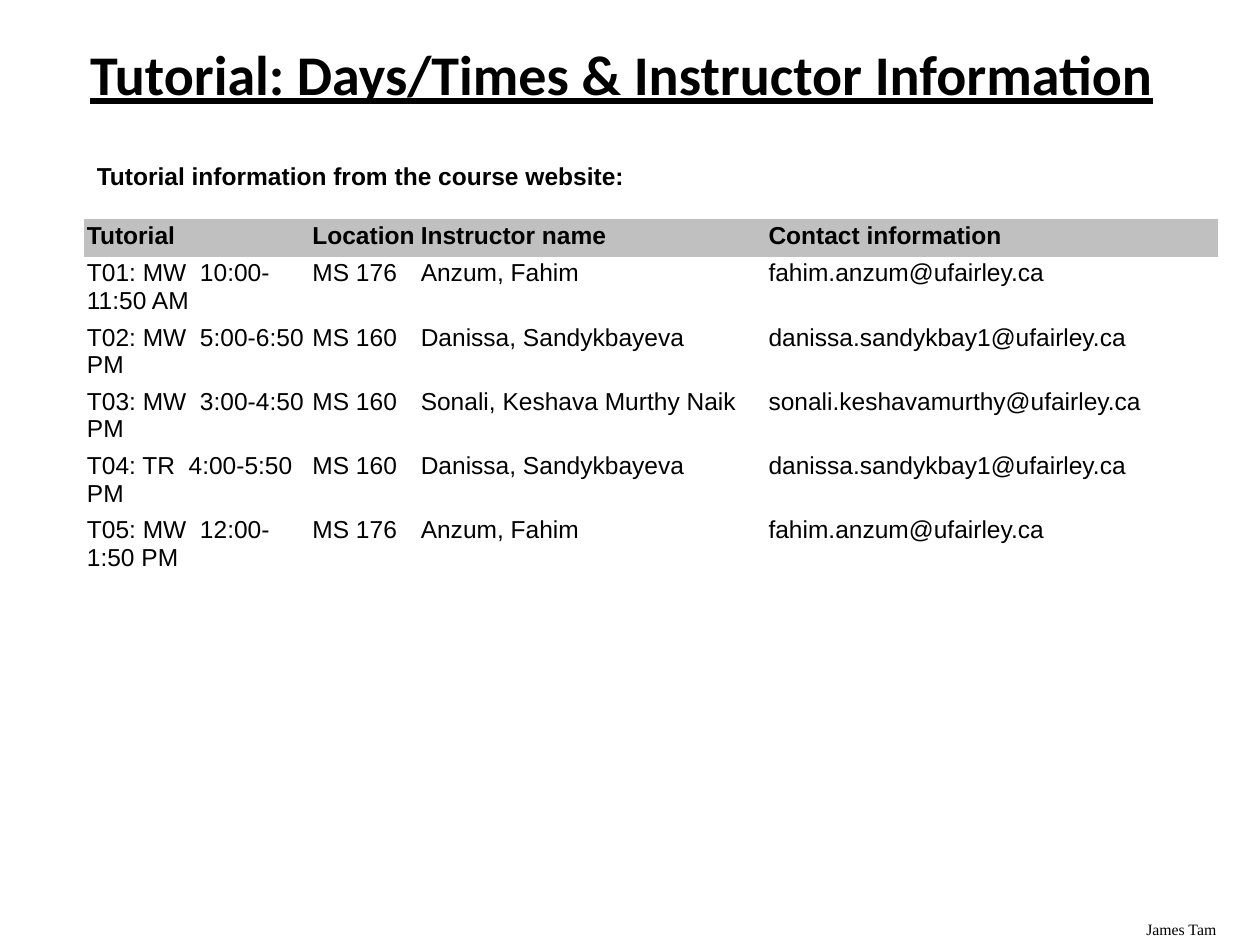
import pptx
import pptx.dml.color
import pptx.enum.text
import pptx.oxml.ns
import pptx.util

TITLE = "Tutorial: Days/Times & Instructor Information"
INTRODUCTION = "Tutorial information from the course website:"
AUTHOR = "James Tam"
HEADINGS = ("Tutorial", "Location", "Instructor name", "Contact information")
INSTRUCTORS = {
    "Anzum, Fahim": "fahim.anzum@ufairley.ca",
    "Danissa, Sandykbayeva": "danissa.sandykbay1@ufairley.ca",
    "Sonali, Keshava Murthy Naik": "sonali.keshavamurthy@ufairley.ca",
}
TUTORIALS = (
    ("T01: MW", "10:00-11:50 AM", "MS 176", "Anzum, Fahim"),
    ("T02: MW", "5:00-6:50 PM", "MS 160", "Danissa, Sandykbayeva"),
    ("T03: MW", "3:00-4:50 PM", "MS 160", "Sonali, Keshava Murthy Naik"),
    ("T04: TR", "4:00-5:50 PM", "MS 160", "Danissa, Sandykbayeva"),
    ("T05: MW", "12:00-1:50 PM", "MS 176", "Anzum, Fahim"),
)
NO_BREAK_GAP = chr(160) * 2

THEME = {
    "text": "000000", "header": "C0C0C0", "body": "FFFFFF",
    "title_font": "Calibri", "body_font": "Arial", "footer_font": "Times New Roman",
    "title_size": 32, "body_size": 14, "footer_size": 9,
    "table_style": "{2D5ABB26-0587-4C30-8999-92F81FD0307C}",
}

SLIDE_WIDTH, SLIDE_HEIGHT = 10, 7.5
LEFT = 0.67
SCHEDULE_COLUMNS = (1.79, 0.86, 2.76, 3.59)
SCHEDULE_ROWS = [0.3] + [0.51] * len(TUTORIALS)
PANEL_COLUMNS = (2.98, 2.55, 4.02)
PANEL_ROWS = [0.36] * 12
CELL_MARGIN = 0.02

inches = pptx.util.Inches


def color(name):
    return pptx.dml.color.RGBColor.from_string(THEME[name])


def write(frame, text, role="body", bold=False, underline=False,
          align=pptx.enum.text.PP_ALIGN.LEFT, line_spacing=None):
    frame.word_wrap = True
    paragraph = frame.paragraphs[0]
    paragraph.alignment = align
    paragraph.line_spacing = line_spacing
    run = paragraph.add_run()
    run.text = text
    run.font.name = THEME[role + "_font"]
    run.font.size = pptx.util.Pt(THEME[role + "_size"])
    run.font.bold = bold
    run.font.underline = underline
    run.font.color.rgb = color("text")


def add_frame(slide, left, top, width, height):
    return slide.shapes.add_textbox(*map(inches, (left, top, width, height))).text_frame


def add_grid(slide, left, top, widths, heights):
    shape = slide.shapes.add_table(
        len(heights), len(widths),
        *map(inches, (left, top, sum(widths), sum(heights))))
    table = shape.table
    table.first_row = table.horz_banding = False
    style = next(shape.element.iter(pptx.oxml.ns.qn("a:tableStyleId")))
    style.text = THEME["table_style"]
    for column, width in zip(table.columns, widths):
        column.width = inches(width)
    for row, height in zip(table.rows, heights):
        row.height = inches(height)
    for cell in table.iter_cells():
        cell.margin_left = cell.margin_right = inches(CELL_MARGIN)
        cell.margin_top = cell.margin_bottom = inches(CELL_MARGIN)
        cell.fill.solid()
        cell.fill.fore_color.rgb = color("body")
    return table


def fill_schedule(table):
    rows = [HEADINGS] + [
        (day + NO_BREAK_GAP + time, room, name, INSTRUCTORS[name])
        for day, time, room, name in TUTORIALS]
    for row_index, values in enumerate(rows):
        for column_index, value in enumerate(values):
            cell = table.cell(row_index, column_index)
            write(cell.text_frame, value, bold=row_index == 0)
            if row_index == 0:
                cell.fill.fore_color.rgb = color("header")


def main():
    presentation = pptx.Presentation()
    presentation.slide_width = inches(SLIDE_WIDTH)
    presentation.slide_height = inches(SLIDE_HEIGHT)
    slide = presentation.slides.add_slide(presentation.slide_layouts[6])

    write(add_frame(slide, SLIDE_WIDTH - 1, SLIDE_HEIGHT - 0.25, 1, 0.25),
          AUTHOR, role="footer")
    title_frame = add_frame(slide, 0.47, 0.33, 8.93, 0.57)
    title_frame.vertical_anchor = pptx.enum.text.MSO_ANCHOR.MIDDLE
    write(title_frame, TITLE, role="title", bold=True, underline=True,
          align=pptx.enum.text.PP_ALIGN.CENTER, line_spacing=0.9)
    add_grid(slide, 0.34, 1.4, PANEL_COLUMNS, PANEL_ROWS)
    write(add_frame(slide, LEFT, 1.23, SLIDE_WIDTH - LEFT, 0.34),
          INTRODUCTION, bold=True)
    fill_schedule(add_grid(slide, LEFT, 1.74, SCHEDULE_COLUMNS, SCHEDULE_ROWS))
    presentation.save("out.pptx")


if __name__ == "__main__":
    main()
